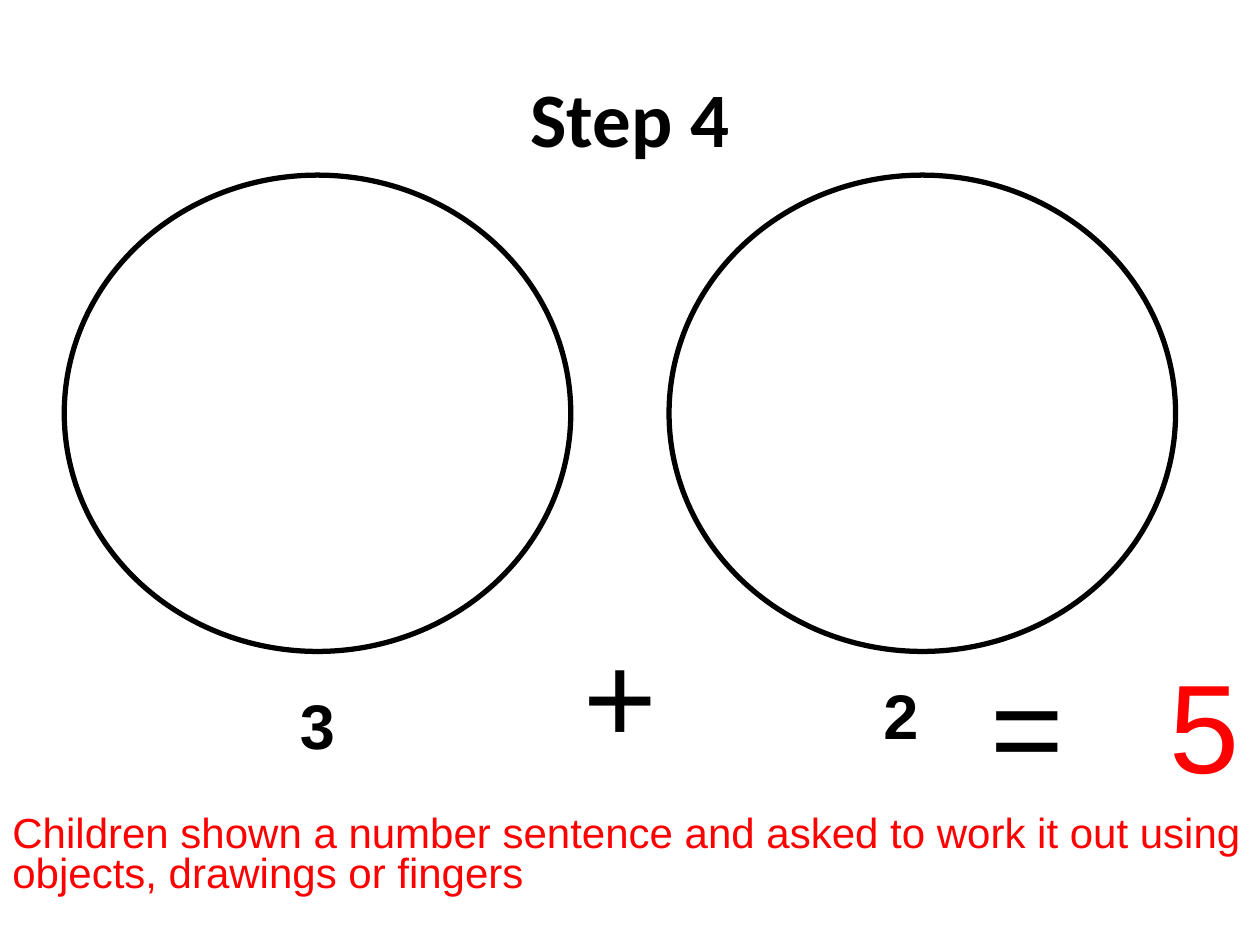
from lxml.etree import SubElement
from pptx import Presentation
from pptx.dml.color import RGBColor
from pptx.enum.shapes import MSO_SHAPE
from pptx.enum.text import MSO_ANCHOR, MSO_AUTO_SIZE, PP_ALIGN
from pptx.oxml.ns import qn
from pptx.util import Inches, Pt

BLACK, RED = "000000", "FF0000"
WIDTH, HEIGHT = 10, 7.5


def colour(hex_code):
    return RGBColor.from_string(hex_code)


def inches(*lengths):
    return [Inches(length) for length in lengths]


def format_run(run, size, hex_code, bold=False, font="Arial"):
    run.font.name = font
    run.font.size = Pt(size)
    run.font.bold = bold
    run.font.color.rgb = colour(hex_code)


def space_before(paragraph, percent):
    """Paragraph spacing relative to the line height."""
    spacing = SubElement(paragraph._p.get_or_add_pPr(), qn("a:spcBef"))
    SubElement(spacing, qn("a:spcPct")).set("val", str(percent * 1000))


def add_tab_stop(paragraph, position):
    stops = SubElement(paragraph._p.get_or_add_pPr(), qn("a:tabLst"))
    stop = SubElement(stops, qn("a:tab"))
    stop.set("pos", str(Inches(position)))
    stop.set("algn", "l")


def add_label(slide, box, parts, size, bold=False, before=50, line=None,
              align=PP_ALIGN.LEFT, indent=0.1):
    """Place one paragraph made of (text, colour) parts in the box."""
    frame = slide.shapes.add_textbox(*inches(*box)).text_frame
    frame.word_wrap = True
    frame.auto_size = MSO_AUTO_SIZE.SHAPE_TO_FIT_TEXT
    frame.margin_left = Inches(indent)
    paragraph = frame.paragraphs[0]
    paragraph.alignment = align
    if line:
        paragraph.line_spacing = line
    space_before(paragraph, before)
    for text, hex_code in parts:
        run = paragraph.add_run()
        run.text = text
        format_run(run, size, hex_code, bold)
    return paragraph


def add_title(slide, box, text):
    title = slide.shapes.title
    title.left, title.top, title.width, title.height = inches(*box)
    frame = title.text_frame
    frame.text = text
    frame.vertical_anchor = MSO_ANCHOR.MIDDLE
    frame.paragraphs[0].alignment = PP_ALIGN.CENTER
    format_run(frame.paragraphs[0].runs[0], 44, BLACK, True, "Calibri")


def add_circles(slide, box, gap):
    """Two equal empty sets, side by side."""
    left, top, width, height = box
    circle_width = (width - gap) / 2
    for column in range(2):
        circle = slide.shapes.add_shape(
            MSO_SHAPE.OVAL,
            *inches(left + column * (circle_width + gap), top,
                    circle_width, height))
        circle.shadow.inherit = False
        circle.fill.background()
        circle.line.color.rgb = colour(BLACK)
        circle.line.width = Pt(3)


def add_number_sentence(slide, box):
    left, top, width, height = box
    right = left + width
    # The two addends, one under each circle
    add_label(slide, (left, top + 0.55, 2.76, 0.7), [("3", BLACK)], 36,
              bold=True, align=PP_ALIGN.CENTER)
    add_label(slide, (left + 4.8, top + 0.47, 1.89, 0.7), [("2", BLACK)], 36,
              bold=True, indent=1.07)
    # Operators and answer
    add_label(slide, (left + 3.39, top, 1.02, height), [("+", BLACK)], 72)
    answer = add_label(slide, (right - 2.24, top + 0.24, 2.24, height),
                       [("=\t", BLACK), ("5", RED)], 72)
    add_tab_stop(answer, 1.42)


def main():
    deck = Presentation()
    deck.slide_width, deck.slide_height = inches(WIDTH, HEIGHT)
    slide = deck.slides.add_slide(deck.slide_layouts[5])
    add_title(slide, (WIDTH * 0.05, HEIGHT * 0.04, WIDTH * 0.9, 1.25),
              "Step 4")
    add_circles(slide, (0.51, 1.39, 8.82, 3.78), gap=0.78)
    add_number_sentence(slide, (1.14, 4.85, WIDTH - 1.14, 1.3))
    # Teaching note
    add_label(slide, (0, 6.43, 10.69, 0.74),
              [("Children shown a number sentence and asked to work it out "
                "using objects, drawings or fingers", RED)],
              24, before=20, line=0.8)
    deck.save("out.pptx")


if __name__ == "__main__":
    main()
